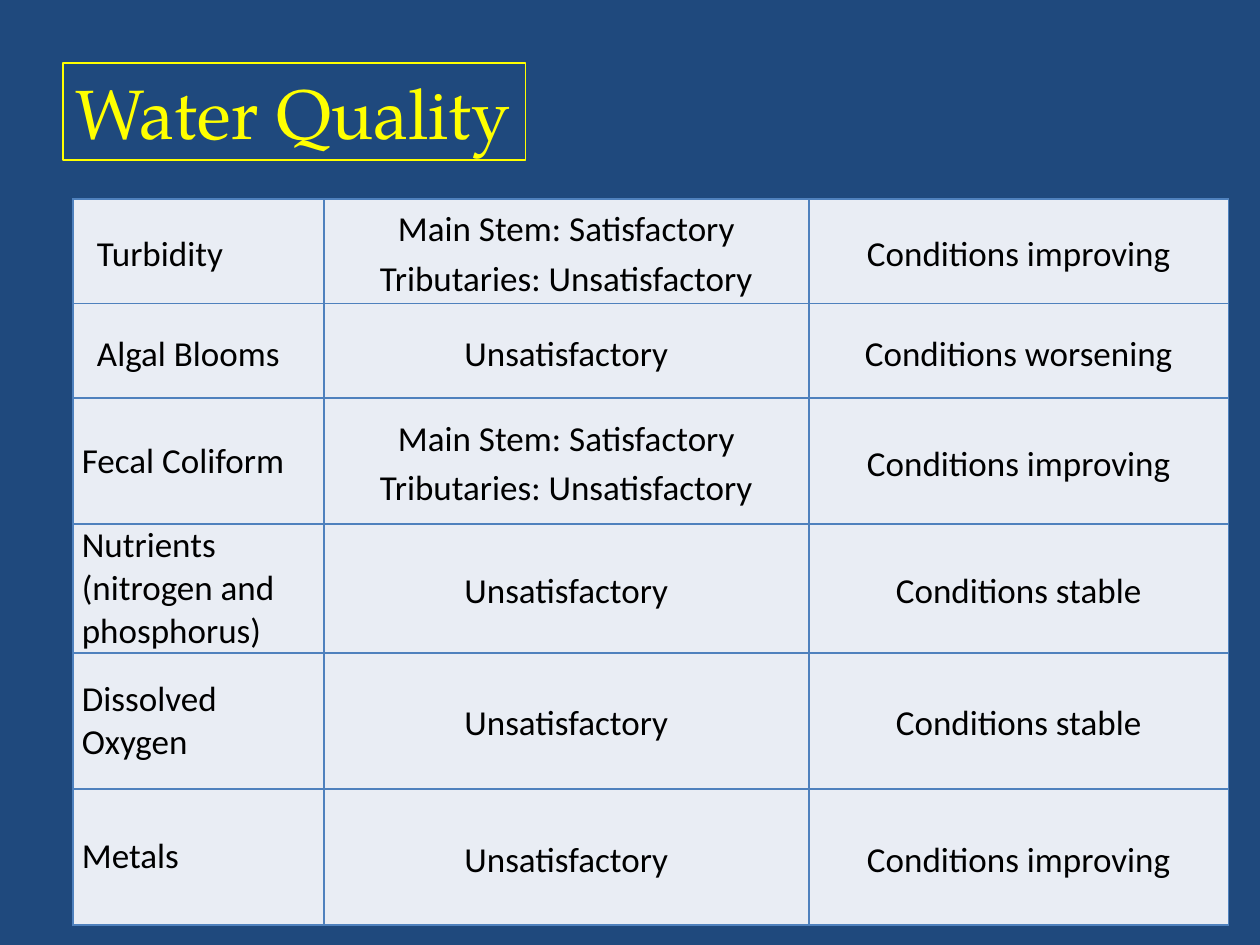
from lxml import etree
from pptx import Presentation
from pptx.dml.color import RGBColor
from pptx.enum.shapes import MSO_SHAPE
from pptx.enum.text import MSO_ANCHOR, MSO_AUTO_SIZE, PP_ALIGN
from pptx.oxml.ns import qn
from pptx.util import Inches, Pt

NAVY, YELLOW, BLACK = "1F497D", "FFFF00", "000000"
CELL_FILL, CELL_BORDER = "E9EDF4", "4F81BD"

SPLIT_STATUS = "Main Stem: Satisfactory\nTributaries: Unsatisfactory"
POOR = "Unsatisfactory"
COLUMN_WIDTHS = [1.99, 3.85, 3.33]
# Row height, indicator, status, trend
INDICATORS = [
    (0.83, "Turbidity", SPLIT_STATUS, "Conditions improving"),
    (0.75, "Algal Blooms", POOR, "Conditions worsening"),
    (1.0, "Fecal Coliform", SPLIT_STATUS, "Conditions improving"),
    (1.0, "Nutrients (nitrogen and phosphorus)", POOR, "Conditions stable"),
    (1.08, "Dissolved Oxygen", POOR, "Conditions stable"),
    (1.08, "Metals", POOR, "Conditions improving"),
]
INDENTED = {"Turbidity", "Algal Blooms"}


def color(hex_string):
    return RGBColor.from_string(hex_string)


def set_font(paragraph, name, size, hex_string):
    paragraph.font.name = name
    paragraph.font.size = Pt(size)
    paragraph.font.color.rgb = color(hex_string)


def add_borders(cell):
    properties = cell._tc.get_or_add_tcPr()
    for side in ("a:lnL", "a:lnR", "a:lnT", "a:lnB"):
        border = etree.SubElement(properties, qn(side), w=str(Pt(1)))
        fill = etree.SubElement(border, qn("a:solidFill"))
        etree.SubElement(fill, qn("a:srgbClr"), val=CELL_BORDER)


def fill_cell(cell, text, centered):
    add_borders(cell)
    cell.fill.solid()
    cell.fill.fore_color.rgb = color(CELL_FILL)
    cell.vertical_anchor = MSO_ANCHOR.MIDDLE
    cell.margin_left = cell.margin_right = Inches(0.07)
    cell.margin_top = cell.margin_bottom = 0
    cell.text = text
    for paragraph in cell.text_frame.paragraphs:
        if centered:
            paragraph.alignment = PP_ALIGN.CENTER
        if text in INDENTED:
            paragraph._p.get_or_add_pPr().set("marL", str(Inches(0.12)))
        if centered or text in INDENTED:
            paragraph.line_spacing = 1.15
        set_font(paragraph, "Calibri", 20, BLACK)


def add_indicator_table(slide, left, top, width, height):
    table = slide.shapes.add_table(
        len(INDICATORS), len(COLUMN_WIDTHS),
        Inches(left), Inches(top), Inches(width), Inches(height)).table
    table.first_row = table.horz_banding = False
    for column, column_width in zip(table.columns, COLUMN_WIDTHS):
        column.width = Inches(column_width)
    for row, (row_height, *texts) in zip(table.rows, INDICATORS):
        row.height = Inches(row_height)
        for index, (cell, text) in enumerate(zip(row.cells, texts)):
            fill_cell(cell, text, centered=index > 0)


def add_title(slide, left, top, width, height):
    title = slide.shapes.add_shape(
        MSO_SHAPE.RECTANGLE,
        Inches(left), Inches(top), Inches(width), Inches(height))
    title.shadow.inherit = False
    title.fill.background()
    title.line.color.rgb = color(YELLOW)
    title.line.width = Pt(0.75)
    frame = title.text_frame
    frame.word_wrap = False
    frame.auto_size = MSO_AUTO_SIZE.SHAPE_TO_FIT_TEXT
    frame.vertical_anchor = MSO_ANCHOR.TOP
    frame.text = "Water Quality"
    heading = frame.paragraphs[0]
    heading.alignment = PP_ALIGN.LEFT
    set_font(heading, "TeX Gyre Pagella", 40, YELLOW)


def main():
    presentation = Presentation()
    presentation.slide_width = Inches(10)
    presentation.slide_height = Inches(7.5)
    slide = presentation.slides.add_slide(presentation.slide_layouts[6])
    slide.background.fill.solid()
    slide.background.fill.fore_color.rgb = color(NAVY)
    add_indicator_table(slide, 0.58, 1.58, 9.17, 5.75)
    add_title(slide, 0.5, 0.5, 3.67, 0.77)
    presentation.save("out.pptx")


if __name__ == "__main__":
    main()
